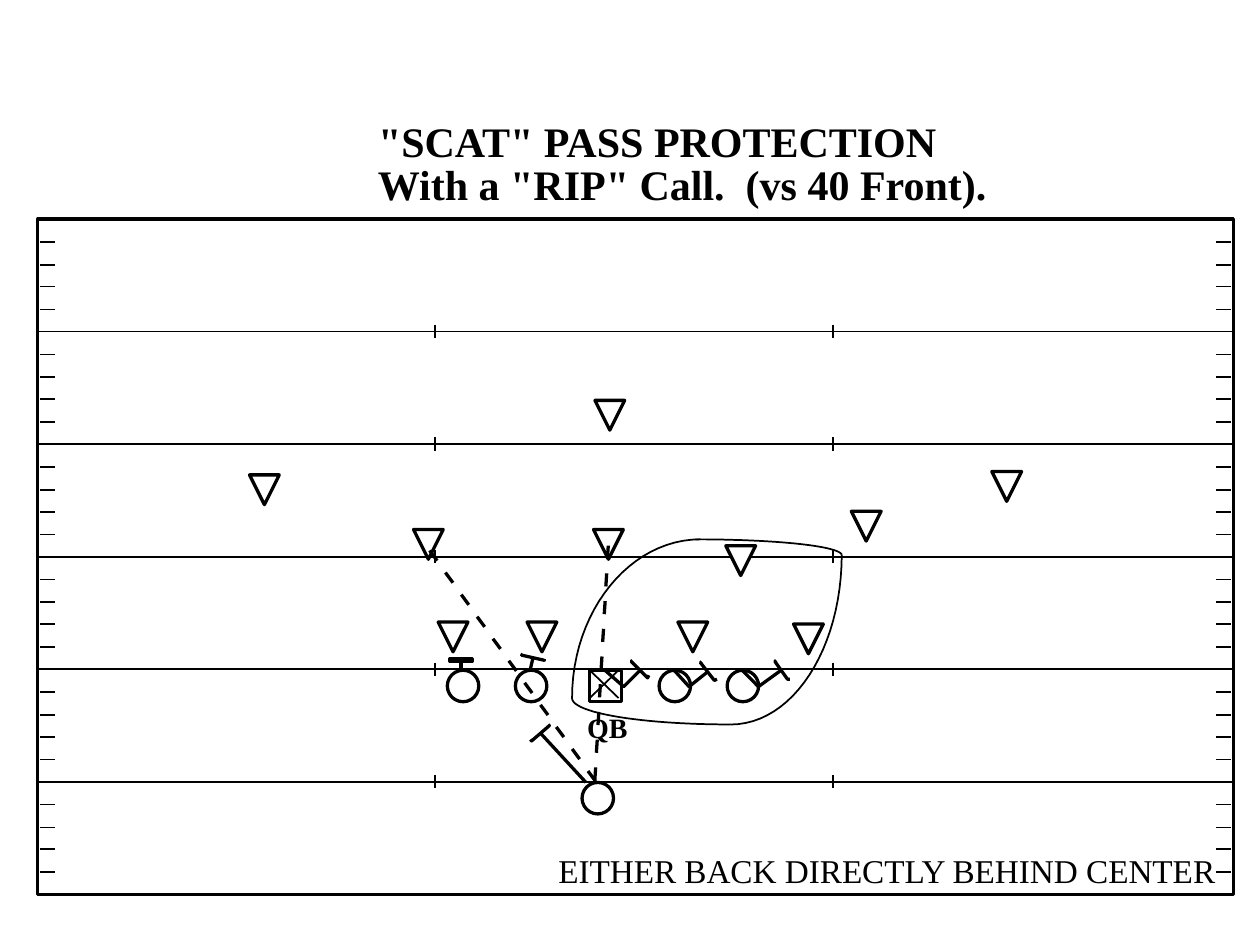
from lxml.etree import SubElement
from pptx import Presentation
from pptx.dml.color import RGBColor
from pptx.enum.shapes import MSO_CONNECTOR, MSO_SHAPE
from pptx.enum.text import MSO_AUTO_SIZE
from pptx.oxml.ns import qn
from pptx.util import Pt

BLACK = RGBColor(0x00, 0x00, 0x00)
WHITE = RGBColor(0xFF, 0xFF, 0xFF)
THIN = 1
THICK = 1.88

presentation = Presentation()
presentation.slide_width = Pt(720)
presentation.slide_height = Pt(540)
slide = presentation.slides.add_slide(presentation.slide_layouts[6])
shapes = slide.shapes


def add_line(x1, y1, x2, y2, width=THIN):
    line = shapes.add_connector(MSO_CONNECTOR.STRAIGHT, Pt(x1), Pt(y1), Pt(x2), Pt(y2))
    line.line.color.rgb = BLACK
    line.line.width = Pt(width)
    SubElement(line._element.spPr, qn("a:effectLst"))


def style_shape(shape, width=THICK, filled=False):
    shape.shadow.inherit = False
    shape.line.color.rgb = BLACK
    shape.line.width = Pt(width)
    if filled:
        shape.fill.solid()
        shape.fill.fore_color.rgb = WHITE
    else:
        shape.fill.background()


field_left, field_top, field_width, field_height = 21.6, 125.2, 683.2, 385.8
band_height = field_height / 6
for band in range(6):
    band_top = field_top + band * band_height
    if band:
        add_line(field_left, band_top, field_left + field_width, band_top)
        for hash_x in (248.4, 475.9):
            add_line(hash_x, band_top - 3.8, hash_x, band_top + 3.8)
    for offset in (13.1, 26.1, 38.6, 51.6):
        for tick_x in (23, 694.8):
            add_line(tick_x, band_top + offset, tick_x + 8.64, band_top + offset)

field = shapes.add_shape(
    MSO_SHAPE.RECTANGLE, Pt(field_left), Pt(field_top), Pt(field_width), Pt(field_height)
)
style_shape(field)

defenders = [
    (250.4, 355.5), (301.2, 355.5), (453.5, 356.6), (236.3, 302.6), (339.2, 302.6),
    (387.4, 355.5), (414.8, 311.9), (142.6, 271.4), (566.8, 269.5), (486.5, 292.2),
    (340, 228.8),
]
for left, top in defenders:
    builder = shapes.build_freeform(Pt(left), Pt(top))
    builder.add_line_segments([(Pt(left + 17), Pt(top)), (Pt(left + 8.5), Pt(top + 17))])
    style_shape(builder.convert_to_shape(), filled=True)

linemen = [(255.6, 383), (294.5, 383), (376.6, 383), (415.5, 383)]
players = [(MSO_SHAPE.OVAL, left, top) for left, top in linemen + [(332.6, 447.1)]]
players.append((MSO_SHAPE.RECTANGLE, 337, 383))
for kind, left, top in players:
    player = shapes.add_shape(kind, Pt(left), Pt(top), Pt(18), Pt(18))
    style_shape(player, filled=True)
add_line(337, 383, 353.5, 398.9)
add_line(337, 398.9, 353.5, 383)

zone_curves = [
    [(326.9, 398.9), (326.9, 349.2), (360, 308.2), (400.3, 308.2)],
    [(417.6, 414), (367.2, 414), (326.9, 407.5), (326.9, 398.9)],
    [(481, 316.8), (481, 370.8), (452.9, 414), (417.6, 414)],
    [(397.4, 308.2), (442.1, 308.2), (478.1, 311.8), (481, 316.8)],
]
curve_steps = 24
for start, control_1, control_2, end in zone_curves:
    points = []
    for step in range(curve_steps + 1):
        t = step / curve_steps
        weights = ((1 - t) ** 3, 3 * t * (1 - t) ** 2, 3 * t**2 * (1 - t), t**3)
        corners = list(zip(weights, (start, control_1, control_2, end)))
        points.append(tuple(Pt(sum(w * corner[axis] for w, corner in corners)) for axis in (0, 1)))
    builder = shapes.build_freeform(*points[0])
    builder.add_line_segments(points[1:], close=False)
    style_shape(builder.convert_to_shape(), THIN)

block_paths = [
    [(313.2, 414), (313.9, 414.7), (303.8, 423.4), (303.1, 422.6)],
    [(424.1, 383), (433.4, 392.4), (446.4, 383)],
    [(451.4, 388.1), (450, 388.1), (442.8, 378), (443.5, 377.3)],
    [(385.2, 383), (393.8, 392.4), (404.6, 383.8)],
    [(409.7, 388.1), (408.2, 388.8), (400.3, 378.7), (401, 378)],
    [(345.6, 383), (356.4, 392.4), (365.8, 383)],
    [(370.8, 385.9), (370.1, 387.4), (360.7, 378), (361.4, 377.3)],
    [(311, 376.6), (311, 377.3), (298.1, 374.4), (298.8, 373.7)],
]
for path_points in block_paths:
    points = [(Pt(x), Pt(y)) for x, y in path_points]
    builder = shapes.build_freeform(*points[0])
    builder.add_line_segments(points[1:], close=False)
    style_shape(builder.convert_to_shape())

block_bar = shapes.add_shape(MSO_SHAPE.RECTANGLE, Pt(257), Pt(376.4), Pt(13), Pt(1.3))
style_shape(block_bar)
for stem in [
    (334.8, 447.1, 308.9, 419), (303.1, 382.3, 304.6, 375.8), (263.5, 382.3, 263.5, 377.3)
]:
    add_line(*stem, THICK)

dashed_reads = [
    (11, 245.5, 314.6, 9.05, 12.6, 4.3, 5.8),
    (9, 347.6, 311.8, -0.9, 15.84, -0.5, 7.5),
]
for count, x, y, step_x, step_y, dash_x, dash_y in dashed_reads:
    for dash in range(count):
        dash_left, dash_top = x + dash * step_x, y + dash * step_y
        add_line(dash_left, dash_top, dash_left + dash_x, dash_top + dash_y, THICK)

labels = [
    ("EITHER BACK DIRECTLY BEHIND CENTER", 319, 486, 406.8, 26.6, 19, False),
    ('"SCAT" PASS PROTECTION', 216, 66.2, 347, 33.1, 24, True),
    ('With a "RIP" Call.  (vs 40 Front).', 216, 90.7, 348.5, 28.8, 24, True),
    ("QB", 335.5, 406.1, 29.5, 21.6, 16, True),
]
for text, left, top, width, height, size, bold in labels:
    text_frame = shapes.add_textbox(Pt(left), Pt(top), Pt(width), Pt(height)).text_frame
    text_frame.margin_left = text_frame.margin_right = 0
    text_frame.margin_top = text_frame.margin_bottom = 0
    text_frame.word_wrap = False
    text_frame.auto_size = MSO_AUTO_SIZE.SHAPE_TO_FIT_TEXT
    text_frame.text = text
    font = text_frame.paragraphs[0].runs[0].font
    font.name = "Times New Roman"
    font.size = Pt(size)
    font.bold = bold
    font.color.rgb = BLACK

presentation.save("out.pptx")
